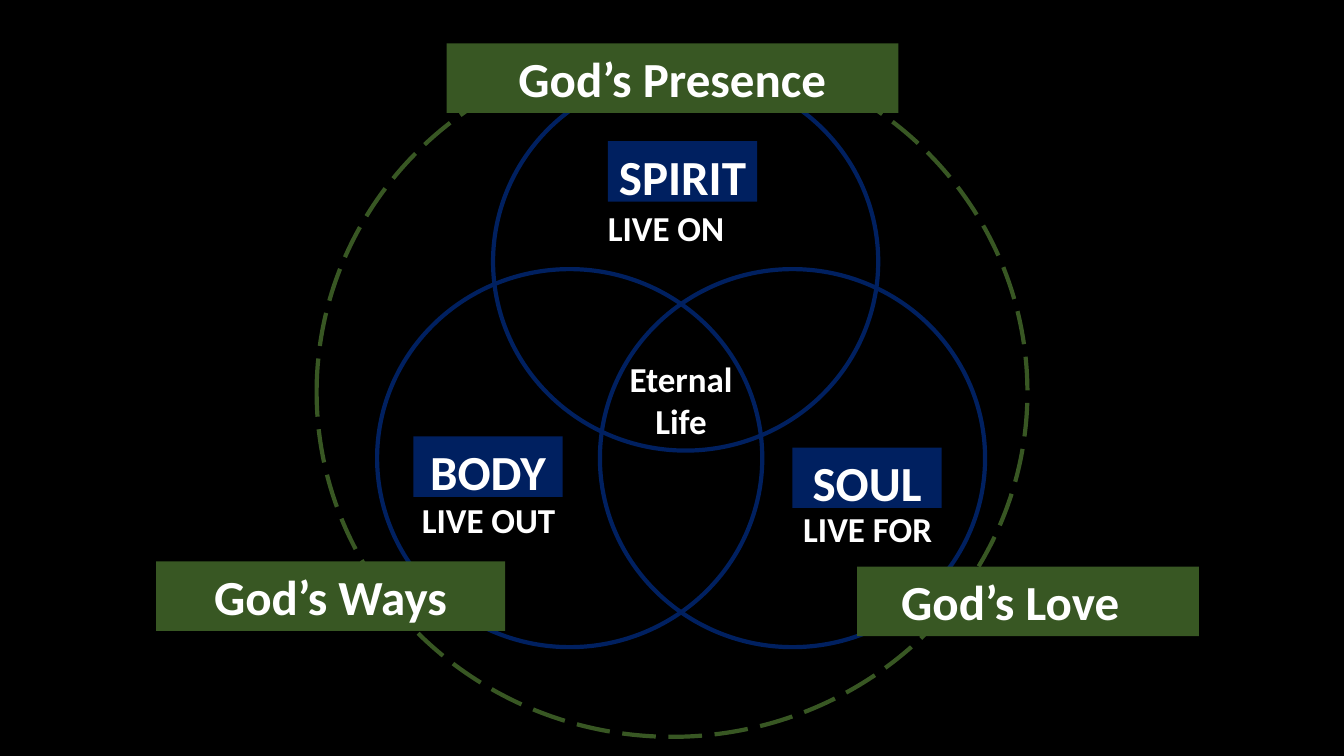
from dataclasses import dataclass

from pptx import Presentation
from pptx.dml.color import RGBColor
from pptx.enum.dml import MSO_LINE
from pptx.enum.shapes import MSO_SHAPE
from pptx.enum.text import MSO_ANCHOR, PP_ALIGN
from pptx.util import Inches, Pt

OVAL, RECTANGLE = MSO_SHAPE.OVAL, MSO_SHAPE.RECTANGLE
LONG_DASH = MSO_LINE.LONG_DASH
TOP, CENTER = MSO_ANCHOR.TOP, PP_ALIGN.CENTER


@dataclass(frozen=True)
class Theme:
    background: RGBColor = RGBColor(0x00, 0x00, 0x00)
    divine: RGBColor = RGBColor(0x38, 0x57, 0x23)
    human: RGBColor = RGBColor(0x00, 0x20, 0x60)
    text: RGBColor = RGBColor(0xFF, 0xFF, 0xFF)
    font: str = "Calibri"
    label_size: int = 35
    caption_size: int = 25
    outline: int = 3


THEME = Theme()

SURROUNDING_RING = (3.14, 0.47, 7.05, 6.84)
CIRCLE_SIZE = (3.82, 3.75)
CIRCLE_CORNERS = [(3.74, 2.67), (5.95, 2.67), (4.89, 0.72)]

PART_SIZE = (1.48, 0.6)
PARTS = [("SOUL", 7.86, 4.44), ("SPIRIT", 6.03, 1.4), ("BODY", 4.1, 4.33)]

CAPTIONS = [
    (["LIVE FOR"], (6.91, 4.99, 3.39, 0.52)),
    (["LIVE ON"], (5.5, 2, 2.21, 0.52)),
    (["LIVE OUT"], (3.74, 4.9, 2.21, 0.52)),
    (["Eternal", "Life"], (5.06, 3.5, 3.39, 0.94)),
]

BANNER_HEIGHT = 0.69
BANNERS = [
    ("God’s Ways", 1.55, 5.57, 3.46, 0),
    ("God’s Love", 8.5, 5.62, 3.39, 0.35),
    ("God’s Presence", 4.43, 0.43, 4.48, 0),
]


def add_ring(slide, box, color, dash=None):
    ring = slide.shapes.add_shape(OVAL, *map(Inches, box))
    ring.shadow.inherit = False
    ring.fill.background()
    ring.line.color.rgb = color
    ring.line.width = Pt(THEME.outline)
    if dash is not None:
        ring.line.dash_style = dash


def write(frame, lines, size, right_inset=0):
    frame.word_wrap = True
    frame.vertical_anchor = TOP
    frame.margin_left = 0
    frame.margin_right = Inches(right_inset)
    for index, line in enumerate(lines):
        paragraph = frame.add_paragraph() if index else frame.paragraphs[0]
        paragraph.text = line
        paragraph.alignment = CENTER
        paragraph.font.name = THEME.font
        paragraph.font.size = Pt(size)
        paragraph.font.bold = True
        paragraph.font.color.rgb = THEME.text


def add_label(slide, label, box, color, right_inset=0):
    plate = slide.shapes.add_shape(RECTANGLE, *map(Inches, box))
    plate.shadow.inherit = False
    plate.fill.solid()
    plate.fill.fore_color.rgb = color
    plate.line.fill.background()
    write(plate.text_frame, [label], THEME.label_size, right_inset)


def main():
    deck = Presentation()
    deck.slide_width, deck.slide_height = Inches(13.33), Inches(7.5)
    slide = deck.slides.add_slide(deck.slide_layouts.get_by_name("Blank"))
    slide.background.fill.solid()
    slide.background.fill.fore_color.rgb = THEME.background

    add_ring(slide, SURROUNDING_RING, THEME.divine, LONG_DASH)
    for corner in CIRCLE_CORNERS:
        add_ring(slide, corner + CIRCLE_SIZE, THEME.human)
    for part, left, top in PARTS:
        add_label(slide, part, (left, top) + PART_SIZE, THEME.human)
    for lines, box in CAPTIONS:
        caption = slide.shapes.add_textbox(*map(Inches, box))
        write(caption.text_frame, lines, THEME.caption_size)
    for banner, left, top, width, right_inset in BANNERS:
        box = (left, top, width, BANNER_HEIGHT)
        add_label(slide, banner, box, THEME.divine, right_inset)

    deck.save("out.pptx")


if __name__ == "__main__":
    main()
